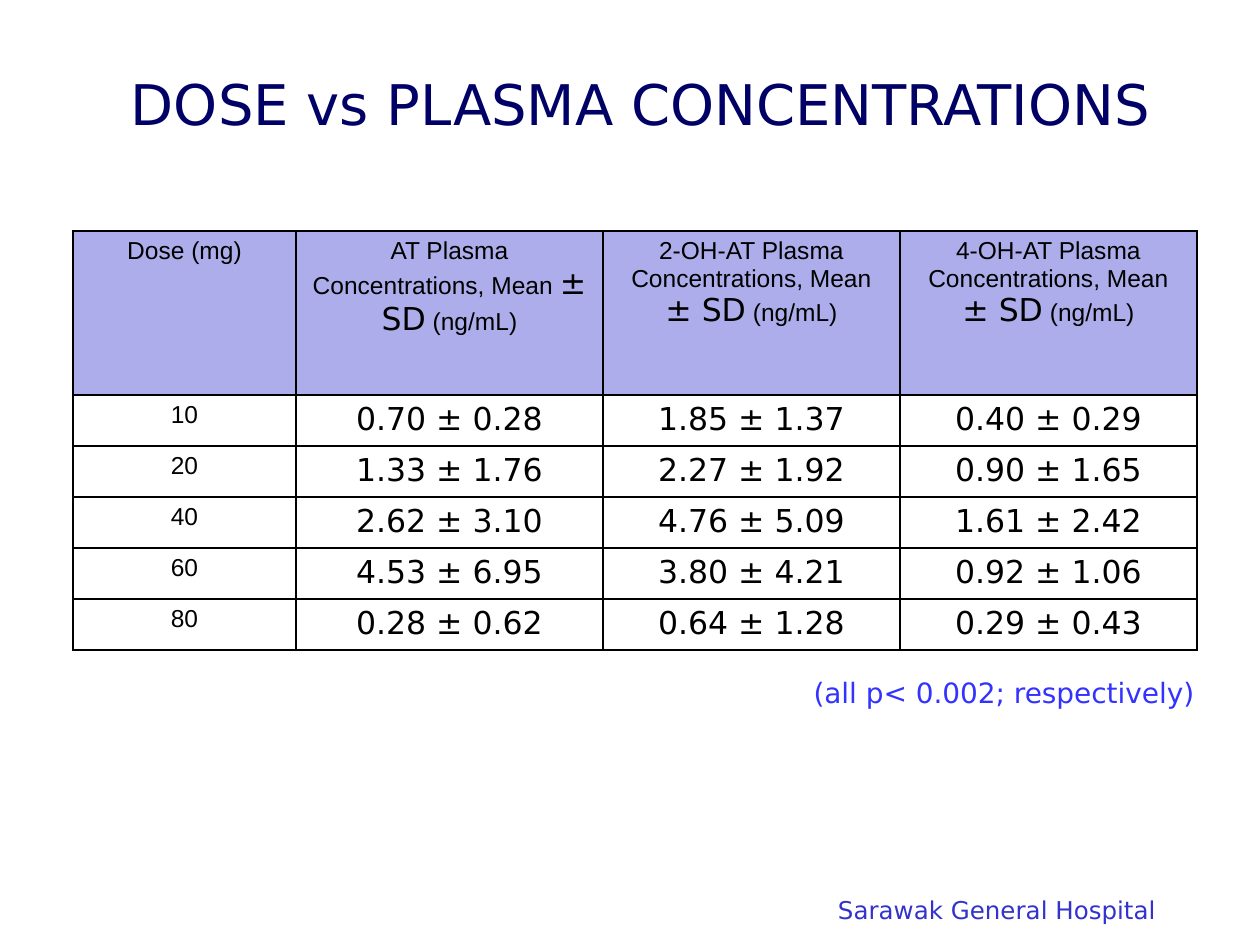
from lxml.etree import SubElement
from pptx import Presentation
from pptx.dml.color import RGBColor
from pptx.enum.text import MSO_ANCHOR, PP_ALIGN
from pptx.oxml.ns import qn
from pptx.util import Emu, Pt

PX = 914400 / 126
SANS = "DejaVu Sans"


def px(n):
    return Emu(round(n * PX))


def write(tf, *runs, color="000000", align=PP_ALIGN.CENTER):
    """Fill the first paragraph with (text, size, font) runs."""
    p = tf.paragraphs[0]
    p.alignment = align
    for text, size, font in runs:
        r = p.add_run()
        r.text = text
        r.font.size = Pt(size)
        r.font.name = font
        r.font.bold = False
        r.font.color.rgb = RGBColor.from_string(color)


prs = Presentation()
prs.slide_width, prs.slide_height = px(1260), px(945)
s = prs.slides.add_slide(prs.slide_layouts[6])

# Hospital name
tf = s.shapes.add_textbox(px(838), px(895), px(319), px(29)).text_frame
tf.margin_left = tf.margin_right = tf.margin_top = tf.margin_bottom = 0
tf.word_wrap = False
write(tf, ("Sarawak General Hospital", 14, SANS), color="3333CC", align=PP_ALIGN.LEFT)

# Title
tf = s.shapes.add_textbox(px(78), px(43), px(1144), px(120)).text_frame
tf.word_wrap = True
tf.vertical_anchor = MSO_ANCHOR.MIDDLE
write(tf, ("DOSE vs PLASMA CONCENTRATIONS ", 32, SANS), color="000066")

# Significance note
tf = s.shapes.add_textbox(px(747), px(669), px(460), px(46)).text_frame
tf.word_wrap = True
write(tf, ("(all p< 0.002; respectively)", 16, SANS), color="3333FF", align=PP_ALIGN.RIGHT)

# Concentration table
analytes = ["AT", "2-OH-AT", "4-OH-AT"]
doses = [
    ("10", "0.70 ± 0.28", "1.85 ± 1.37", "0.40 ± 0.29"),
    ("20", "1.33 ± 1.76", "2.27 ± 1.92", "0.90 ± 1.65"),
    ("40", "2.62 ± 3.10", "4.76 ± 5.09", "1.61 ± 2.42"),
    ("60", "4.53 ± 6.95", "3.80 ± 4.21", "0.92 ± 1.06"),
    ("80", "0.28 ± 0.62", "0.64 ± 1.28", "0.29 ± 0.43"),
]
col_widths = [223, 307, 297, 297]
row_heights = [164] + [51] * len(doses)

table = s.shapes.add_table(
    len(row_heights), len(col_widths), px(73), px(231),
    px(sum(col_widths)), px(sum(row_heights)),
).table
table.first_row = table.horz_banding = False
for col, width in zip(table.columns, col_widths):
    col.width = px(width)
for row, height in zip(table.rows, row_heights):
    row.height = px(height)

for cell in table.iter_cells():
    tcPr = cell._tc.get_or_add_tcPr()
    for side in ("a:lnL", "a:lnR", "a:lnT", "a:lnB"):
        ln = SubElement(tcPr, qn(side), w=str(Pt(1)))
        SubElement(SubElement(ln, qn("a:solidFill")), qn("a:srgbClr"), val="000000")
    cell.fill.background()

for cell in table.rows[0].cells:
    cell.fill.solid()
    cell.fill.fore_color.rgb = RGBColor.from_string("ADADEB")

write(table.cell(0, 0).text_frame, ("Dose (mg)", 14, "Arial"))
for c, analyte in enumerate(analytes, 1):
    write(
        table.cell(0, c).text_frame,
        (f"{analyte} Plasma Concentrations, Mean ", 14, "Arial"),
        ("± SD", 18, SANS),
        (" (ng/mL)", 14, "Arial"),
    )

for r, values in enumerate(doses, 1):
    for c, value in enumerate(values):
        size, font = (18, SANS) if c else (14, "Arial")
        write(table.cell(r, c).text_frame, (value, size, font))

prs.save("out.pptx")
